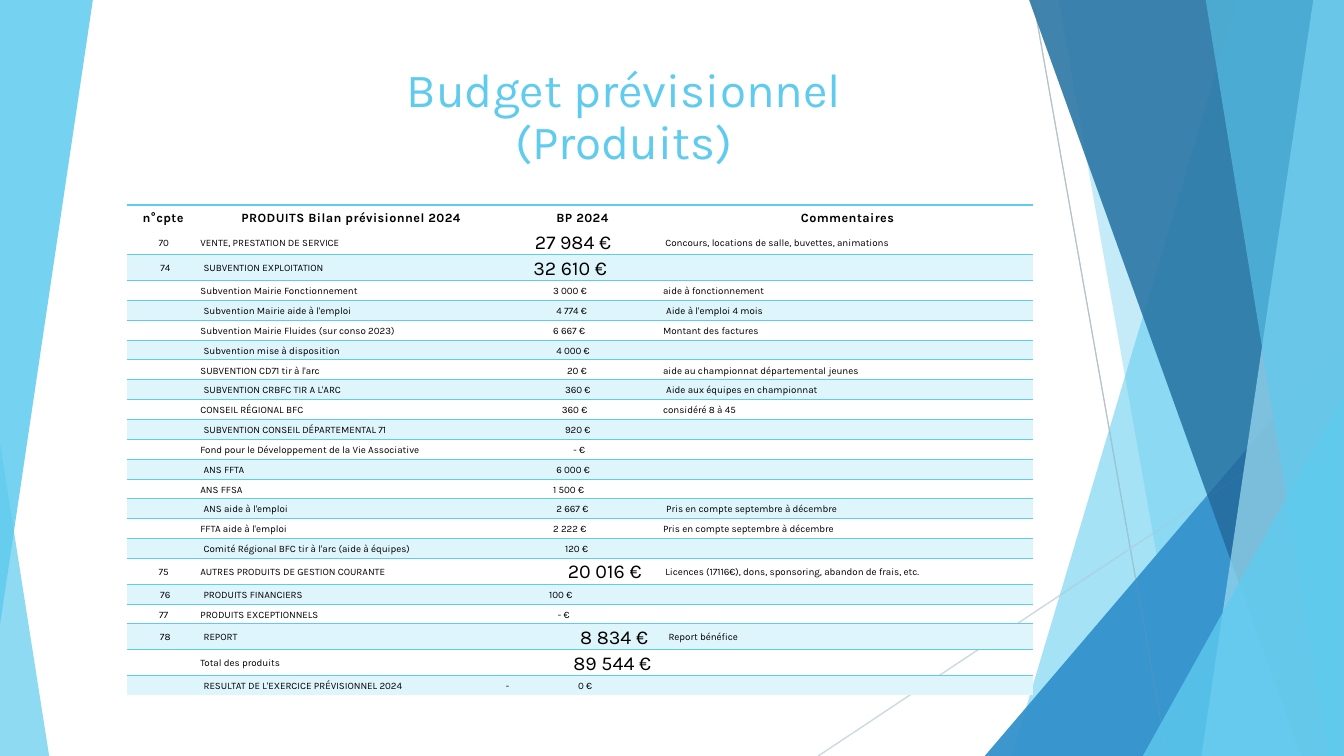
from dataclasses import dataclass

from lxml.etree import SubElement
from pptx import Presentation
from pptx.dml.color import RGBColor
from pptx.enum.shapes import MSO_CONNECTOR, MSO_SHAPE
from pptx.enum.text import MSO_ANCHOR, MSO_AUTO_SIZE, PP_ALIGN
from pptx.oxml.ns import qn
from pptx.shapes.autoshape import Shape
from pptx.slide import Slide
from pptx.table import _Cell
from pptx.util import Cm, Pt


@dataclass(frozen=True)
class Theme:
    font: str = "Karla"
    sky: str = "5FCBEF"
    azure: str = "17B0E4"
    blue: str = "2E83C3"
    navy: str = "226292"
    pale: str = "9FE0F5"
    band: str = "DFF5FC"
    ink: str = "000000"
    title: float = 34
    header: float = 9
    body: float = 7
    total: float = 14


@dataclass(frozen=True)
class Panel:
    top_x: float
    bottom_x: float


@dataclass(frozen=True)
class Triangle:
    left: float
    top: float
    width: float
    height: float
    apex: float = 1
    rotation: float = 0


@dataclass(frozen=True)
class Ray:
    start: tuple[float, float]
    end: tuple[float, float]


@dataclass(frozen=True)
class Layer:
    ray_colors: tuple[str, str]
    ray_alpha: int
    corner: Triangle
    tints: tuple[tuple[str, int], ...]


@dataclass(frozen=True)
class Entry:
    account: str
    label: str
    amount: str
    indent: float
    comment: str = ""
    is_total: bool = False


THEME = Theme()
WIDTH, HEIGHT = 33.87, 19.05
RAYS = (Ray((26.04, 0), (29.41, HEIGHT)), Ray((WIDTH, 10.24), (20.62, HEIGHT)))
FACETS = (
    Panel(31.19, 25.5),
    Panel(26.67, 30.05),
    Triangle(24.82, 8.46, 9.04, 10.59),
    Panel(25.93, 32.79),
    Panel(33.1, 30.28),
    Panel(30.38, 33.48),
    Triangle(28.8, 9.98, 5.05, 9.07),
)
LAYERS = (
    Layer((THEME.sky, THEME.sky), 70, Triangle(0, 11.15, 1.24, 7.9, apex=0),
          ((THEME.sky, 36), (THEME.sky, 20), (THEME.azure, 66), (THEME.azure, 50),
           (THEME.blue, 70), (THEME.navy, 80), (THEME.azure, 66), (THEME.sky, 70))),
    Layer(("BFBFBF", "D9D9D9"), 100, Triangle(0, 0, 2.34, 15.75, rotation=180),
          ((THEME.sky, 30), (THEME.sky, 20), (THEME.blue, 72), (THEME.navy, 70),
           (THEME.pale, 70), (THEME.sky, 65), (THEME.sky, 80), (THEME.sky, 85))),
)
COLUMNS = (1.85, 7.62, 4.04, 9.32)
HEADINGS = ("n°cpte", "PRODUITS Bilan prévisionnel 2024", "BP 2024", "Commentaires")
HUNDREDS, THOUSANDS = 1.49, 1.27
RESULT_TAB = 1.82
ENTRIES = (
    Entry("70", "VENTE, PRESTATION DE SERVICE", "27 984 €", 0.81,
          " Concours, locations de salle, buvettes, animations", True),
    Entry("74", "SUBVENTION EXPLOITATION", "32 610 €", 0.69, is_total=True),
    Entry("", "Subvention Mairie Fonctionnement", "3 000 €", THOUSANDS, "aide à fonctionnement"),
    Entry("", "Subvention Mairie aide à l'emploi", "4 774 €", THOUSANDS, "Aide à l'emploi 4 mois"),
    Entry("", "Subvention Mairie Fluides (sur conso 2023)", "6 667 €", THOUSANDS,
          "Montant des factures"),
    Entry("", "Subvention mise à disposition", "4 000 €", THOUSANDS),
    Entry("", "SUBVENTION CD71 tir à l'arc", "20 €", 1.62,
          "aide au championnat départemental jeunes"),
    Entry("", "SUBVENTION CRBFC TIR A L'ARC", "360 €", HUNDREDS, "Aide aux équipes en championnat"),
    Entry("", "CONSEIL RÉGIONAL BFC", "360 €", HUNDREDS, "considéré 8 à 45"),
    Entry("", "SUBVENTION CONSEIL DÉPARTEMENTAL 71", "920 €", HUNDREDS),
    Entry("", "Fond pour le Développement de la Vie Associative", "- €", 1.78),
    Entry("", "ANS FFTA", "6 000 €", THOUSANDS),
    Entry("", "ANS FFSA", "1 500 €", THOUSANDS),
    Entry("", "ANS aide à l'emploi", "2 667 €", THOUSANDS, "Pris en compte septembre à décembre"),
    Entry("", "FFTA aide à l'emploi", "2 222 €", THOUSANDS, "Pris en compte septembre à décembre"),
    Entry("", "Comité Régional BFC tir à l'arc (aide à équipes)", "120 €", HUNDREDS),
    Entry("75", "AUTRES PRODUITS DE GESTION COURANTE", "20 016 €", 1.64,
          " Licences (17116€), dons, sponsoring, abandon de frais, etc.", True),
    Entry("76", "PRODUITS FINANCIERS", "100 €", 1.09),
    Entry("77", "PRODUITS EXCEPTIONNELS", "- €", 1.39),
    Entry("78", "REPORT", "8 834 €", 1.87, " Report bénéfice", True),
    Entry("", "Total des produits", "89 544 €", 1.78, is_total=True),
    Entry("", "RESULTAT DE L'EXERCICE PRÉVISIONNEL 2024", "-\t0 €", 0),
)


def set_alpha(element, alpha: int) -> None:
    for color in element.iter(qn("a:srgbClr")):
        SubElement(color, qn("a:alpha"), val=str(alpha * 1000))


def draw_ray(slide: Slide, ray: Ray, color: str, alpha: int) -> None:
    ends = [Cm(value) for value in ray.start + ray.end]
    line = slide.shapes.add_connector(MSO_CONNECTOR.STRAIGHT, *ends)
    line.line.color.rgb = RGBColor.from_string(color)
    line.line.width = Pt(0.75)
    properties = line._element.spPr
    set_alpha(properties, alpha)
    SubElement(properties, qn("a:effectLst"))


def build_facet(slide: Slide, facet: Panel | Triangle) -> Shape:
    if isinstance(facet, Panel):
        outline = slide.shapes.build_freeform(Cm(facet.top_x), Cm(-0.02))
        corners = ((WIDTH, -0.02), (WIDTH, HEIGHT), (facet.bottom_x, HEIGHT))
        outline.add_line_segments([(Cm(x), Cm(y)) for x, y in corners])
        return outline.convert_to_shape()
    triangle = slide.shapes.add_shape(MSO_SHAPE.ISOSCELES_TRIANGLE, Cm(facet.left), Cm(facet.top),
                                      Cm(facet.width), Cm(facet.height))
    triangle.adjustments[0] = facet.apex
    triangle.rotation = facet.rotation
    return triangle


def draw_layer(slide: Slide, layer: Layer) -> None:
    for ray, color in zip(RAYS, layer.ray_colors):
        draw_ray(slide, ray, color, layer.ray_alpha)
    for facet, (color, alpha) in zip((*FACETS, layer.corner), layer.tints):
        shape = build_facet(slide, facet)
        shape.shadow.inherit = False
        shape.line.fill.background()
        shape.fill.solid()
        shape.fill.fore_color.rgb = RGBColor.from_string(color)
        set_alpha(shape._element.spPr, alpha)


def draw_title(slide: Slide) -> None:
    title = slide.shapes.title
    title.left, title.top, title.width, title.height = Cm(4.22), Cm(1.35), Cm(23.01), Cm(3.05)
    frame = title.text_frame
    frame.text = "Budget prévisionnel\v(Produits)"
    frame.auto_size = MSO_AUTO_SIZE.NONE
    frame.vertical_anchor = MSO_ANCHOR.BOTTOM
    heading = frame.paragraphs[0]
    heading.alignment = PP_ALIGN.CENTER
    heading.line_spacing = 0.9
    for run in heading.runs:
        run.font.name, run.font.size = THEME.font, Pt(THEME.title)
        run.font.color.rgb = RGBColor.from_string(THEME.sky)
    for line_break in heading._p.findall(qn("a:br")):
        SubElement(line_break, qn("a:rPr"), sz=str(THEME.title * 100))


def add_top_border(cell: _Cell, points: float) -> None:
    properties = cell._tc.get_or_add_tcPr()
    border = properties.makeelement(qn("a:lnT"), {"w": str(Pt(points))})
    SubElement(SubElement(border, qn("a:solidFill")), qn("a:srgbClr"), val=THEME.sky)
    properties.insert(0, border)


def fill_cell(cell: _Cell, text: str, size: float, indent: float = 0, centred: bool = False,
              banded: bool = False, header: bool = False) -> None:
    cell.margin_left = Cm(indent + (0.08 if banded else 0))
    cell.margin_top, cell.margin_right, cell.margin_bottom = Cm(0.05), Cm(0.03 if header else 0), 0
    cell.vertical_anchor = MSO_ANCHOR.MIDDLE
    cell.fill.background()
    if banded:
        cell.fill.solid()
        cell.fill.fore_color.rgb = RGBColor.from_string(THEME.band)
    if banded or header:
        add_top_border(cell, 1.5 if header else 0.75)
    content = cell.text_frame.paragraphs[0]
    content.text = text
    content.alignment = PP_ALIGN.CENTER if centred else PP_ALIGN.LEFT
    if "\t" in text:
        stops = SubElement(content._p.get_or_add_pPr(), qn("a:tabLst"))
        SubElement(stops, qn("a:tab"), pos=str(Cm(RESULT_TAB)), algn="l")
    if not text:
        SubElement(content._p, qn("a:endParaRPr"), sz=str(size * 100))
    for run in content.runs:
        run.font.name, run.font.size, run.font.bold = THEME.font, Pt(size), header
        run.font.color.rgb = RGBColor.from_string(THEME.ink)
        if header:
            run._r.get_or_add_rPr().set("spc", "30")


def draw_budget(slide: Slide) -> None:
    heights = [0.61] + [0.65 if entry.is_total else 0.5 for entry in ENTRIES]
    budget = slide.shapes.add_table(len(heights), len(COLUMNS), Cm(3.2), Cm(5.16),
                                    Cm(sum(COLUMNS)), Cm(sum(heights))).table
    budget.first_row = budget.horz_banding = False
    budget._tbl.tblPr.find(qn("a:tableStyleId")).text = "{2D5ABB26-0587-4C30-8999-92F81FD0307C}"
    for column, width in zip(budget.columns, COLUMNS):
        column.width = Cm(width)
    for row, height in zip(budget.rows, heights):
        row.height = Cm(height)
    for column, heading in enumerate(HEADINGS):
        fill_cell(budget.cell(0, column), heading, THEME.header, centred=True, header=True)
    for row, entry in enumerate(ENTRIES, start=1):
        banded = row % 2 == 0
        account, label, amount, comment = budget.rows[row].cells
        fill_cell(account, entry.account, THEME.body, centred=True, banded=banded)
        fill_cell(label, entry.label, THEME.body, banded=banded)
        amount_size = THEME.total if entry.is_total else THEME.body
        fill_cell(amount, entry.amount, amount_size, entry.indent, banded=banded)
        fill_cell(comment, entry.comment, THEME.body, banded=banded)


def main() -> None:
    deck = Presentation()
    deck.slide_width, deck.slide_height = Cm(WIDTH), Cm(HEIGHT)
    slide = deck.slides.add_slide(deck.slide_layouts[5])
    for layer in LAYERS:
        draw_layer(slide, layer)
    draw_title(slide)
    draw_budget(slide)
    deck.save("out.pptx")


if __name__ == "__main__":
    main()
